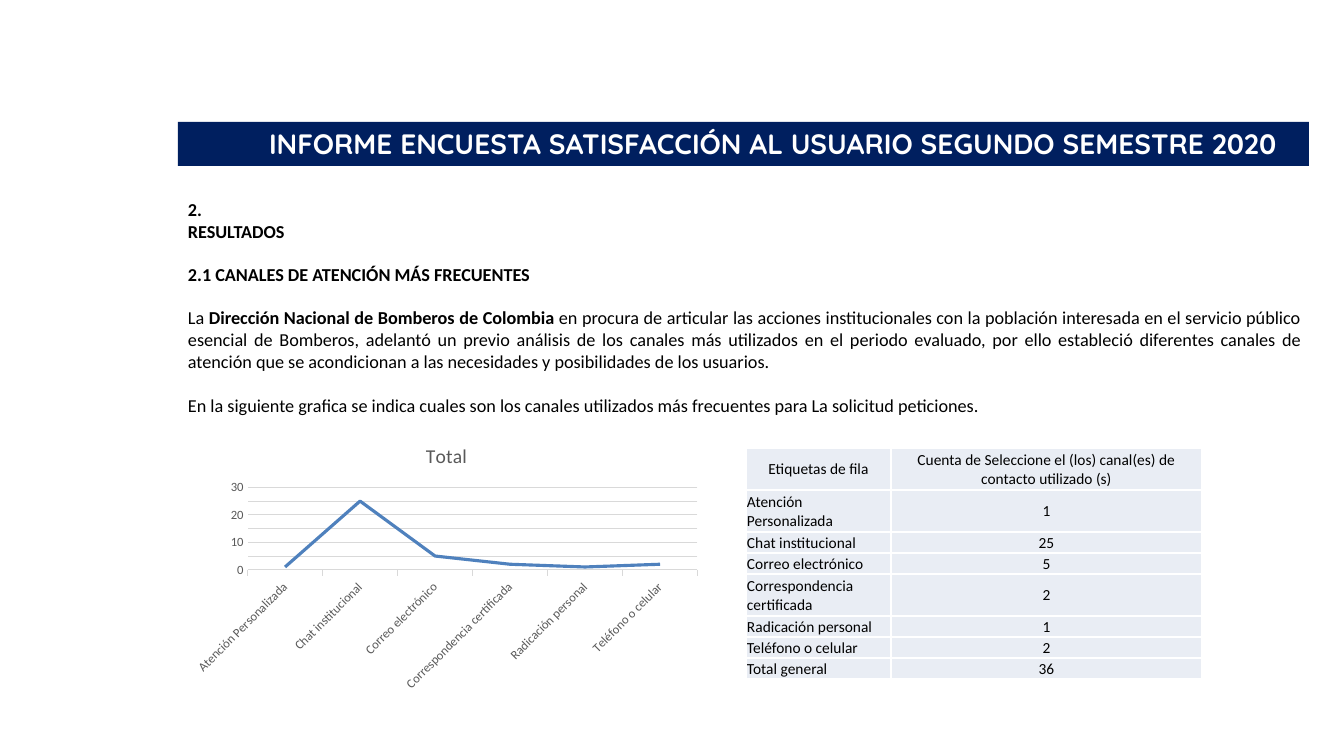
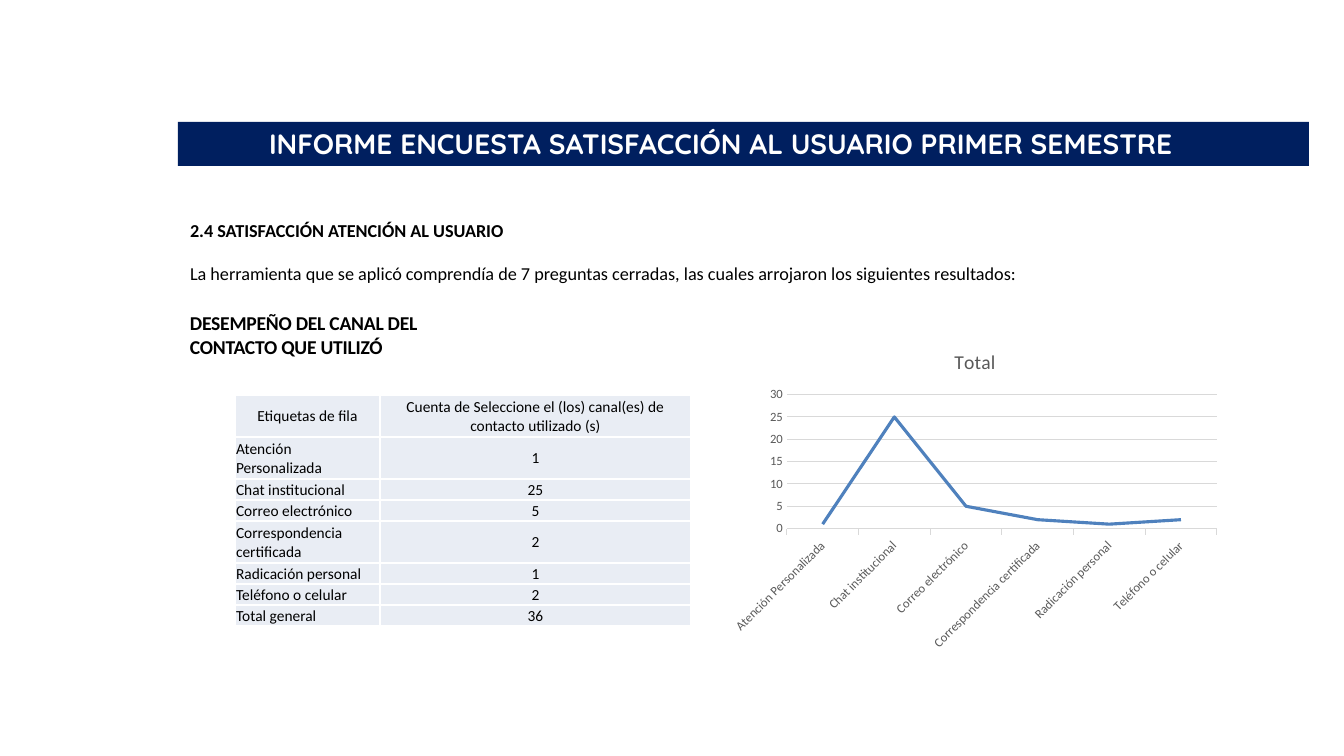
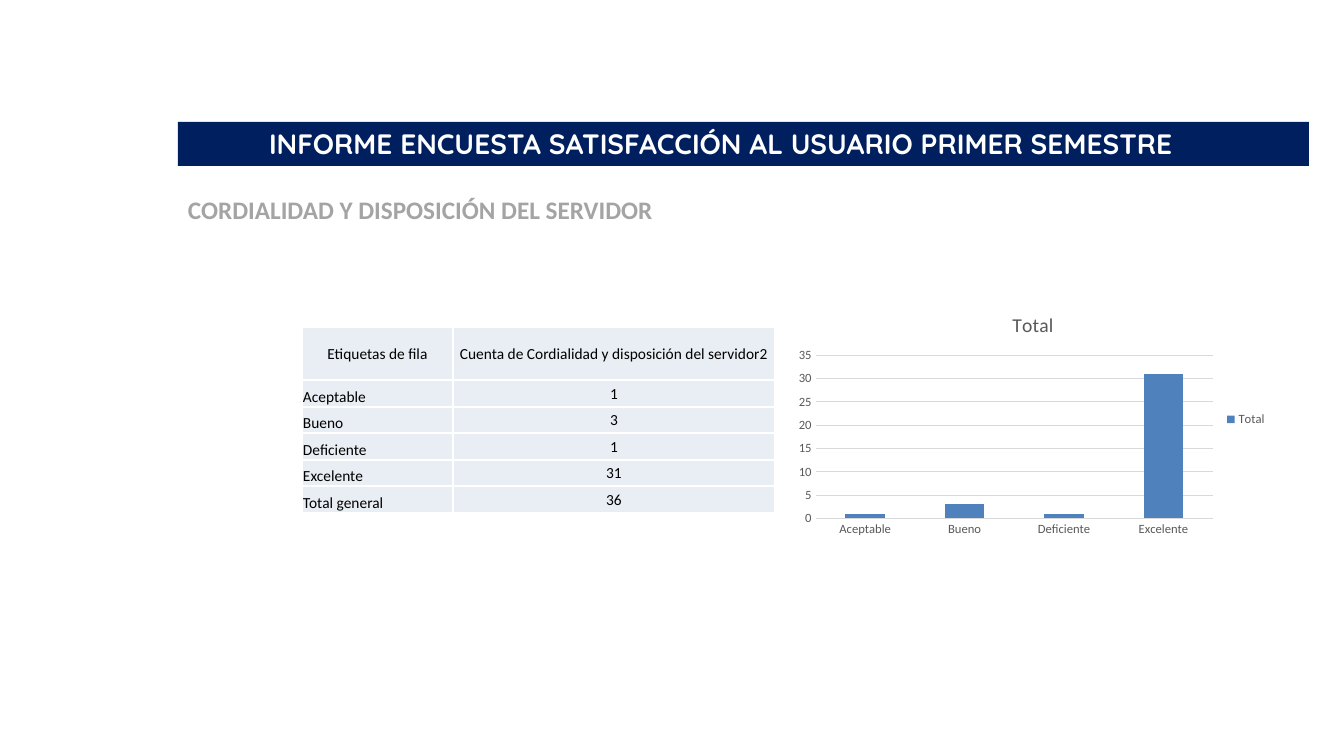
from lxml import etree
from pptx import Presentation
from pptx.chart.data import CategoryChartData
from pptx.dml.color import RGBColor
from pptx.enum.chart import XL_CHART_TYPE as ChartType, XL_LEGEND_POSITION as LegendPos
from pptx.enum.chart import XL_MARKER_STYLE as Marker, XL_TICK_MARK as Tick
from pptx.enum.shapes import MSO_SHAPE as Shape
from pptx.enum.text import MSO_ANCHOR as Anchor, MSO_AUTO_SIZE as AutoSize, PP_ALIGN as Align
from pptx.oxml.ns import qn
from pptx.util import Emu, Pt

COLORS = {
    "navy": "001F5F",
    "white": "FFFFFF",
    "black": "000000",
    "heading": "A4A4A4",
    "cell": "E9EDF4",
    "series": "4F81BD",
    "label": "595959",
    "grid": "D9D9D9",
}
CHANNELS = {
    "Atención Personalizada": 1,
    "Chat institucional": 25,
    "Correo electrónico": 5,
    "Correspondencia certificada": 2,
    "Radicación personal": 1,
    "Teléfono o celular": 2,
}
CHANNEL_HEADER = "Cuenta de Seleccione el (los) canal(es) de contacto utilizado (s)"
CHANNEL_ROWS = [42, 42, 21, 21, 42, 21, 21, 21]
RATINGS = {"Aceptable": 1, "Bueno": 3, "Deficiente": 1, "Excelente": 31}
FIRST_TITLE = "INFORME ENCUESTA SATISFACCIÓN AL USUARIO SEGUNDO SEMESTRE 2020"
TITLE = "INFORME ENCUESTA SATISFACCIÓN AL USUARIO PRIMER SEMESTRE"


def px(n):
    return Emu(round(n * 12192000 / 1344))


def rgb(name):
    return RGBColor.from_string(COLORS[name])


def style_font(font, size, color, name="Calibri", bold=False):
    font.size = Pt(size)
    font.name = name
    font.bold = bold
    font.color.rgb = rgb(color)


def write(p, text, size=13, color="black", name="Calibri", bold=False, spc=0, align=None):
    r = p.add_run()
    r.text = text
    style_font(r.font, size, color, name, bold)
    if spc:
        r._r.get_or_add_rPr().set("spc", str(round(spc * 100)))
    if align is not None:
        p.alignment = align


class Deck:
    def __init__(self):
        self.prs = Presentation()
        self.prs.slide_width, self.prs.slide_height = px(1344), px(756)
        self.s = None

    def frame(self, sp):
        tf = sp.text_frame
        tf.word_wrap = True
        tf.auto_size = AutoSize.NONE
        tf.vertical_anchor = Anchor.TOP
        tf.margin_left = tf.margin_right = tf.margin_top = tf.margin_bottom = 0
        return tf

    def slide(self, title, width=1094):
        self.s = self.prs.slides.add_slide(self.prs.slide_layouts[5])
        self.band()
        sp = self.s.shapes.title
        sp.left, sp.top, sp.width, sp.height = px(125), px(126), px(width), px(34)
        tf = self.frame(sp)
        tf.margin_left = px(144)
        write(tf.paragraphs[0], title, size=20, color="white", name="Quicksand",
              bold=True, align=Align.LEFT)

    def band(self):
        sp = self.s.shapes.add_shape(Shape.RECTANGLE, px(178), px(122), px(1131), px(44))
        sp.shadow.inherit = False
        sp.fill.solid()
        sp.fill.fore_color.rgb = rgb("navy")
        sp.line.fill.background()
        self.s.shapes._spTree.insert(2, sp._element)

    def text(self, x, y, w, h, *paragraphs, align=Align.LEFT, **fmt):
        tf = self.frame(self.s.shapes.add_textbox(px(x), px(y), px(w), px(h)))
        for i, runs in enumerate(paragraphs):
            p = tf.add_paragraph() if i else tf.paragraphs[0]
            if i:
                p.space_before = Pt(15.6)
            for text, bold in runs:
                write(p, text, bold=bold, align=align, **fmt)

    def table(self, x, y, widths, heights, header, data, label_anchor=Anchor.MIDDLE):
        rows = [("Etiquetas de fila", header), *data.items(),
                ("Total general", sum(data.values()))]
        table = self.s.shapes.add_table(len(rows), len(widths), px(x), px(y),
                                        px(sum(widths)), px(sum(heights))).table
        table.first_row = table.horz_banding = False
        for col, width in zip(table.columns, widths):
            col.width = px(width)
        for i, (row, height) in enumerate(zip(rows, heights)):
            table.rows[i].height = px(height)
            for j, value in enumerate(row):
                is_label = i > 0 and j == 0
                self.cell(table.cell(i, j), str(value),
                          Align.LEFT if is_label else Align.CENTER,
                          label_anchor if is_label else Anchor.MIDDLE)

    def cell(self, cell, text, align, anchor):
        cell.margin_left = cell.margin_right = cell.margin_top = px(1)
        cell.margin_bottom = 0
        cell.vertical_anchor = anchor
        tc_pr = cell._tc.get_or_add_tcPr()
        for side in ("a:lnL", "a:lnR", "a:lnT", "a:lnB"):
            line = etree.SubElement(tc_pr, qn(side), w=str(Pt(1)))
            fill = etree.SubElement(line, qn("a:solidFill"))
            etree.SubElement(fill, qn("a:srgbClr"), val=COLORS["white"])
        cell.fill.solid()
        cell.fill.fore_color.rgb = rgb("cell")
        write(cell.text_frame.paragraphs[0], text, size=11, align=align)

    def chart(self, kind, x, y, w, h, data, top):
        chart_data = CategoryChartData()
        chart_data.categories = list(data)
        chart_data.add_series("Total", list(data.values()))
        chart = self.s.shapes.add_chart(kind, px(x), px(y), px(w), px(h), chart_data).chart
        style_font(chart.font, 10, "black")
        chart.has_legend = False
        chart.has_title = True
        write(chart.chart_title.text_frame.paragraphs[0], "Total", size=14, color="label")
        chart.chart_title.include_in_layout = False
        chart.plots[0].vary_by_categories = False
        for axis in (chart.category_axis, chart.value_axis):
            style_font(axis.tick_labels.font, 9, "label")
            axis.major_tick_mark = axis.minor_tick_mark = Tick.NONE
            axis.format.line.fill.background()
        axis = chart.value_axis
        axis.minimum_scale, axis.maximum_scale, axis.major_unit = 0, top, 5
        axis.has_major_gridlines = True
        self.line(axis.major_gridlines.format.line, "grid", 0.75)
        return chart

    def line(self, line, color, width):
        line.color.rgb = rgb(color)
        line.width = Pt(width)

    def line_chart(self, x, y, w, h, data):
        chart = self.chart(ChartType.LINE, x, y, w, h, data, top=30)
        axis = chart.category_axis
        axis.major_tick_mark = Tick.OUTSIDE
        self.line(axis.format.line, "grid", 0.75)
        axis._element.find(qn("c:txPr")).find(qn("a:bodyPr")).set("rot", "-2700000")
        series = chart.plots[0].series[0]
        series.smooth = False
        series.marker.style = Marker.NONE
        self.line(series.format.line, "series", 2.25)

    def column_chart(self, x, y, w, h, data):
        chart = self.chart(ChartType.COLUMN_CLUSTERED, x, y, w, h, data, top=35)
        plot = chart.plots[0]
        plot.gap_width = 150
        fill = plot.series[0].format.fill
        fill.solid()
        fill.fore_color.rgb = rgb("series")
        chart.has_legend = True
        chart.legend.position = LegendPos.RIGHT
        chart.legend.include_in_layout = False
        style_font(chart.legend.font, 9, "label")


def main():
    d = Deck()

    d.slide(FIRST_TITLE, width=1160)
    d.text(188, 198, 105, 45, [("2. RESULTADOS", True)])
    d.text(188, 263, 1112, 155,
           [("2.1 CANALES DE ATENCIÓN MÁS FRECUENTES", True)],
           [("La ", False), ("Dirección Nacional de Bomberos de Colombia ", True),
            ("en procura de articular las acciones institucionales con la población "
             "interesada en el servicio público esencial de Bomberos, adelantó un previo "
             "análisis de los canales más utilizados en el periodo evaluado, por ello "
             "estableció diferentes canales de atención que se acondicionan a las "
             "necesidades y posibilidades de los usuarios.", False)],
           [("En la siguiente grafica se indica cuales son los canales utilizados más "
             "frecuentes para La solicitud peticiones.", False)],
           align=Align.JUSTIFY)
    d.line_chart(185, 428, 523, 269, CHANNELS)
    d.table(746, 448, [145, 311], CHANNEL_ROWS, CHANNEL_HEADER, CHANNELS)

    d.slide(TITLE)
    d.text(190, 219, 835, 67, [("2.4 SATISFACCIÓN ATENCIÓN AL USUARIO", True)],
           [("La herramienta que se aplicó comprendía de 7 preguntas cerradas, las cuales "
             "arrojaron los siguientes resultados:", False)])
    d.text(190, 311, 310, 47, [("DESEMPEÑO DEL CANAL DEL CONTACTO QUE UTILIZÓ", True)],
           size=14, spc=-0.2)
    d.table(235, 395, [145, 311], CHANNEL_ROWS, CHANNEL_HEADER, CHANNELS)
    d.line_chart(723, 333, 504, 324, CHANNELS)

    d.slide(TITLE)
    d.text(188, 194, 798, 30, [("CORDIALIDAD Y DISPOSICIÓN DEL SERVIDOR", True)],
           size=18, color="heading")
    d.table(302, 327, [151, 322], [53, 27, 26, 27, 26, 27],
            "Cuenta de Cordialidad y disposición del servidor2", RATINGS, Anchor.BOTTOM)
    d.column_chart(789, 297, 488, 245, RATINGS)

    d.prs.save("out.pptx")


if __name__ == "__main__":
    main()
